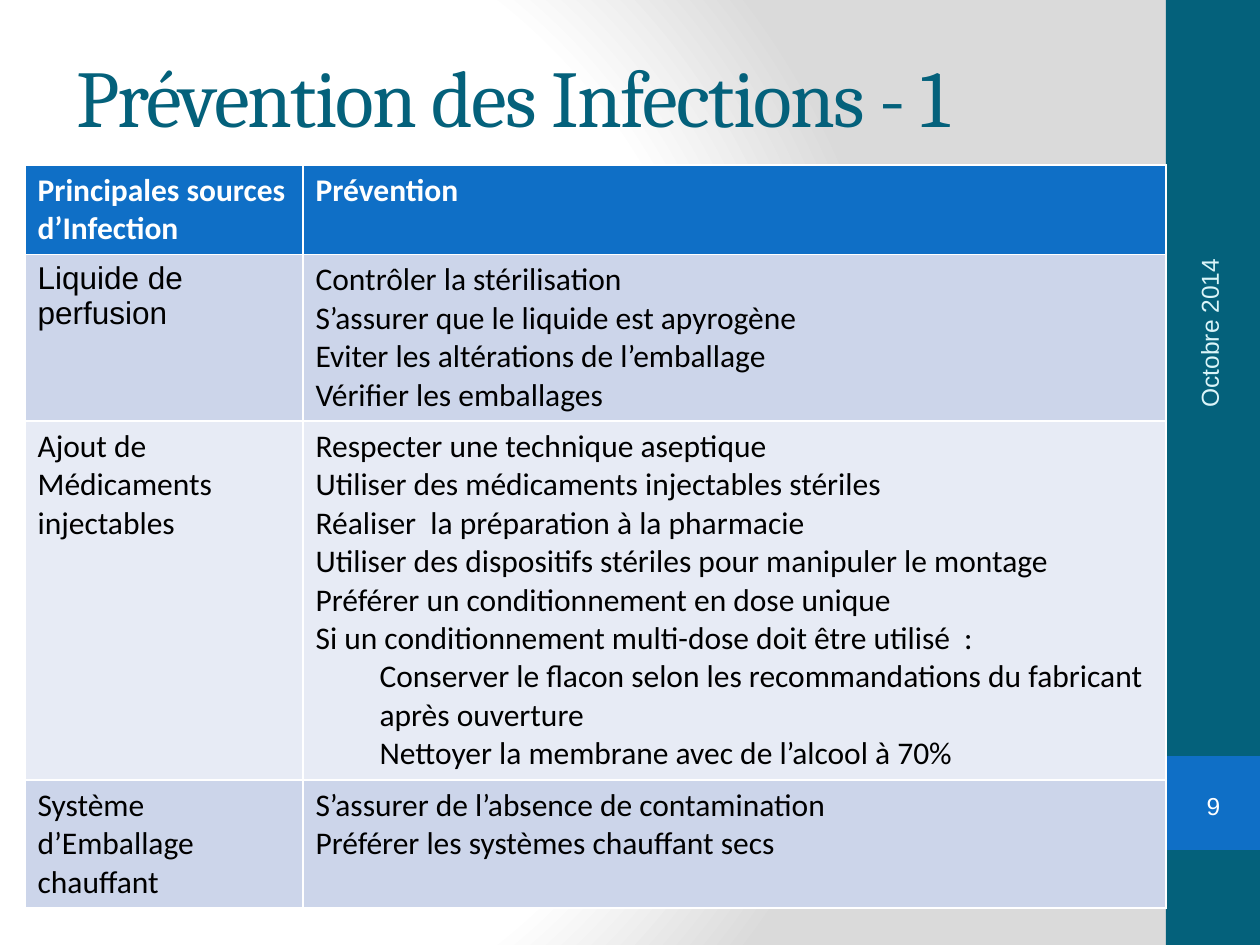
from lxml.etree import SubElement
from pptx import Presentation
from pptx.dml.color import RGBColor
from pptx.enum.shapes import MSO_SHAPE
from pptx.enum.text import MSO_ANCHOR, PP_ALIGN
from pptx.oxml.ns import qn
from pptx.util import Emu, Pt

SCALE = 914400 / 126
WHITE = RGBColor(0xFF, 0xFF, 0xFF)
BLACK = RGBColor(0x00, 0x00, 0x00)
GREY = RGBColor(0xDA, 0xDA, 0xDA)
TEAL = RGBColor(0x04, 0x61, 0x7B)
BLUE = RGBColor(0x0F, 0x6F, 0xC6)
PALE_CYAN = RGBColor(0xDB, 0xF5, 0xF9)
ROW_DARK = RGBColor(0xCC, 0xD5, 0xEA)
ROW_LIGHT = RGBColor(0xE7, 0xEB, 0xF5)

ROWS = [
    (["Principales sources d’Infection"], ["Prévention"]),
    (["Liquide de perfusion"],
     ["Contrôler la stérilisation",
      "S’assurer que le liquide est apyrogène",
      "Eviter les altérations de l’emballage",
      "Vérifier les emballages"]),
    (["Ajout de", "Médicaments injectables"],
     ["Respecter une technique aseptique",
      "Utiliser des médicaments injectables stériles",
      "Réaliser  la préparation à la pharmacie",
      "Utiliser des dispositifs stériles pour manipuler le montage",
      "Préférer un conditionnement en dose unique",
      "Si un conditionnement multi-dose doit être utilisé  :",
      "Conserver le flacon selon les recommandations du fabricant",
      "après ouverture",
      "Nettoyer la membrane avec de l’alcool à 70%"]),
    (["Système d’Emballage chauffant"],
     ["S’assurer de l’absence de contamination",
      "Préférer les systèmes chauffant secs"]),
]
INDENTED = ROWS[2][1][-3:]
ROW_FILLS = [BLUE, ROW_DARK, ROW_LIGHT, ROW_DARK]
ROW_HEIGHTS = [88, 166, 359, 127]
COLUMN_WIDTHS = [278, 863]


def px(*lengths):
    return [Emu(round(length * SCALE)) for length in lengths]


def set_font(paragraph, name, size, color, bold=False):
    for run in paragraph.runs:
        run.font.name = name
        run.font.size = Pt(size)
        run.font.color.rgb = color
        run.font.bold = bold


presentation = Presentation()
presentation.slide_width, presentation.slide_height = px(1260, 945)
slide = presentation.slides.add_slide(presentation.slide_layouts[5])

# Background: white glow on the left fading to grey
background = slide.background.fill
background.gradient()
gradient = background._fill._gradFill
for child in list(gradient):
    gradient.remove(child)
stops = SubElement(gradient, qn("a:gsLst"))
for position, color in [(0, WHITE), (75000, WHITE), (100000, GREY)]:
    stop = SubElement(stops, qn("a:gs"), pos=str(position))
    SubElement(stop, qn("a:srgbClr"), val=str(color))
circle = SubElement(gradient, qn("a:path"), path="circle")
SubElement(circle, qn("a:fillToRect"), l="20000", t="50000", r="100000", b="50000")

# Side band and page number block
for top, height, color in [(0, 945, TEAL), (756, 94, BLUE)]:
    band = slide.shapes.add_shape(MSO_SHAPE.RECTANGLE, *px(1166, top, 94, height))
    band.shadow.inherit = False
    band.fill.solid()
    band.fill.fore_color.rgb = color
    band.line.fill.background()

title = slide.shapes.title
title.left, title.top, title.width, title.height = px(64, 16, 1050, 158)
title.text_frame.text = "Prévention des Infections - 1"
title.text_frame.vertical_anchor = MSO_ANCHOR.MIDDLE
heading = title.text_frame.paragraphs[0]
heading.alignment = PP_ALIGN.LEFT
set_font(heading, "Cambria", 46, TEAL)
heading.runs[0].font._element.set("spc", "-100")

# Infection sources and their prevention
table = slide.shapes.add_table(
    len(ROWS), 2, *px(25, 165, sum(COLUMN_WIDTHS), sum(ROW_HEIGHTS))).table
for column, width in zip(table.columns, px(*COLUMN_WIDTHS)):
    column.width = width
for row, height in zip(table.rows, px(*ROW_HEIGHTS)):
    row.height = height
for row_index, row_texts in enumerate(ROWS):
    header = row_index == 0
    for column_index, lines in enumerate(row_texts):
        cell = table.cell(row_index, column_index)
        cell.fill.solid()
        cell.fill.fore_color.rgb = ROW_FILLS[row_index]
        cell.text_frame.text = "\n".join(lines)
        font_name = "Arial" if (row_index, column_index) == (1, 0) else "Calibri"
        for paragraph in cell.text_frame.paragraphs:
            if paragraph.text in INDENTED:
                paragraph._p.get_or_add_pPr().set("marL", str(px(64)[0]))
            set_font(paragraph, font_name, 18, WHITE if header else BLACK, header)

date = slide.shapes.add_textbox(*px(1041, 227, 336, 50))
date.rotation = 270
date.text_frame.word_wrap = True
date.text_frame.vertical_anchor = MSO_ANCHOR.MIDDLE
date.text_frame.text = "Octobre 2014"
set_font(date.text_frame.paragraphs[0], "Arial", 14, PALE_CYAN)

number = slide.shapes.add_shape(MSO_SHAPE.DOUBLE_BRACKET, *px(1176, 779, 75, 54))
number.shadow.inherit = False
number.adjustments[0] = 0.18
number.fill.background()
number.line.fill.background()
frame = number.text_frame
frame.margin_left = frame.margin_right = frame.margin_top = frame.margin_bottom = 0
frame.vertical_anchor = MSO_ANCHOR.MIDDLE
frame.text = "9"
frame.paragraphs[0].alignment = PP_ALIGN.CENTER
set_font(frame.paragraphs[0], "Arial", 14, WHITE)

presentation.save("out.pptx")
